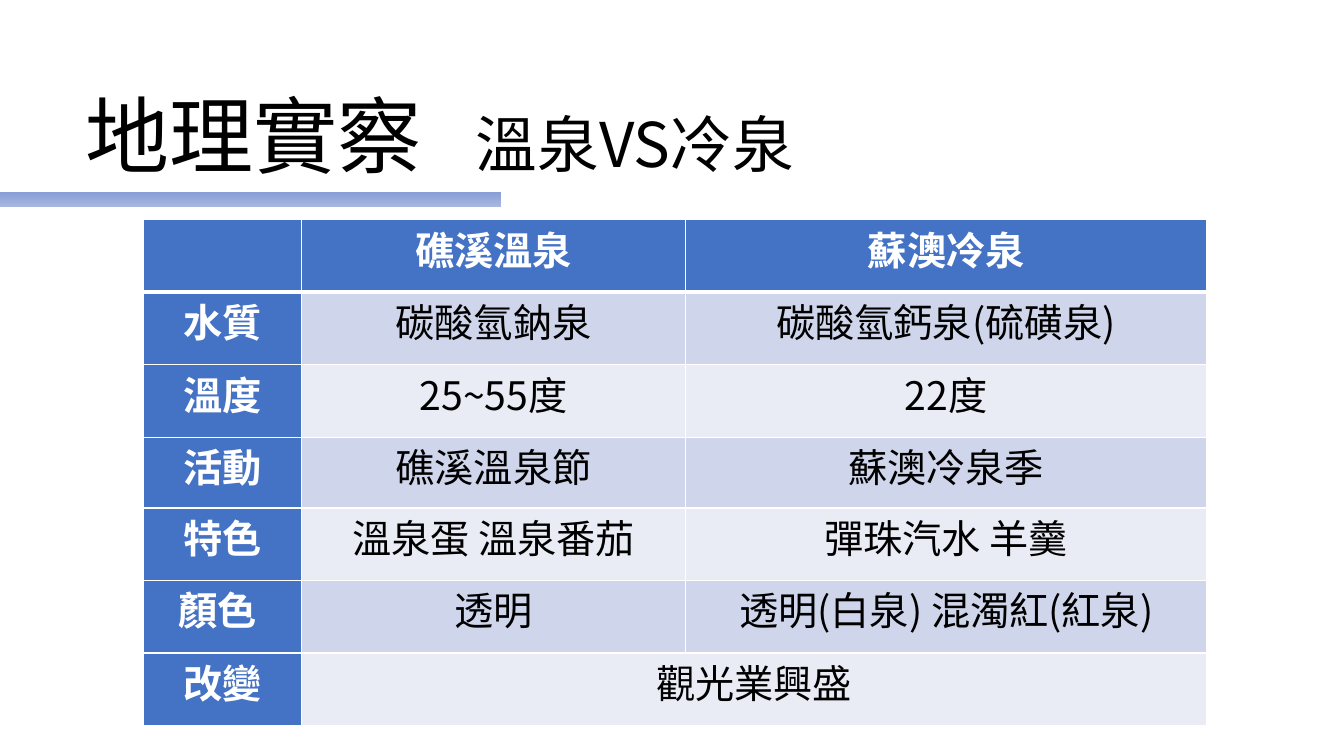
from lxml import etree
from pptx import Presentation
from pptx.dml.color import RGBColor
from pptx.enum import shapes, text
from pptx.oxml.ns import qn
from pptx.util import Inches, Pt

FONT = "Noto Sans CJK SC"
WHITE, BLACK, BLUE = "FFFFFF", "000000", "4472C4"
BANDS = ["CFD5EA", "E9EBF5"]
BAR_TOP, BAR_BOTTOM = "889ED7", "A8B7DF"

TITLE = [("地理實察", 60), ("\t溫泉VS冷泉", 44)]
ROWS = [
    ["", "礁溪溫泉", "蘇澳冷泉"],
    ["水質", "碳酸氫鈉泉", "碳酸氫鈣泉(硫磺泉)"],
    ["溫度", "25~55度", "22度"],
    ["活動", "礁溪溫泉節", "蘇澳冷泉季"],
    ["特色", "溫泉蛋 溫泉番茄", "彈珠汽水 羊羹"],
    ["顏色 ", "透明", "透明(白泉) 混濁紅(紅泉)"],
    ["改變", "觀光業興盛", ""],
]
COL_WIDTHS = [1.57, 3.81, 5.17]
ROW_HEIGHTS = [0.72, 0.72, 0.72, 0.7, 0.72, 0.72, 0.72]


def rgb(value):
    return RGBColor.from_string(value)


def style_run(r, size, color, bold=False):
    r.font.size, r.font.bold, r.font.name = Pt(size), bold, FONT
    r.font.color.rgb = rgb(color)
    east_asian = etree.Element(qn("a:ea"), typeface=FONT)
    r.font._element.find(qn("a:latin")).addnext(east_asian)


def set_borders(cell, widths):
    """Draw white borders; widths maps L, R, T, B to points."""
    props = cell._tc.get_or_add_tcPr()
    for i, (side, width) in enumerate(widths.items()):
        line = etree.Element(qn(f"a:ln{side}"), w=str(Pt(width)))
        fill = etree.SubElement(line, qn("a:solidFill"))
        etree.SubElement(fill, qn("a:srgbClr"), val=WHITE)
        props.insert(i, line)


def add_title(s):
    box = s.shapes.add_textbox(Inches(0.75), Inches(0.73), Inches(9.33), Inches(1.32))
    tf = box.text_frame
    tf.word_wrap = True
    tf.vertical_anchor = text.MSO_ANCHOR.MIDDLE
    p = tf.paragraphs[0]
    tabs = etree.SubElement(p._p.get_or_add_pPr(), qn("a:tabLst"))
    etree.SubElement(tabs, qn("a:tab"), pos=str(Inches(3.87)), algn="l")
    p.line_spacing = 0.9
    for words, size in TITLE:
        r = p.add_run()
        r.text = words
        style_run(r, size, BLACK)


def add_comparison(s):
    frame = s.shapes.add_table(
        len(ROWS), len(COL_WIDTHS), Inches(1.42), Inches(2.18),
        Inches(sum(COL_WIDTHS)), Inches(sum(ROW_HEIGHTS)))
    table = frame.table
    table.first_col = True
    for column, width in zip(table.columns, COL_WIDTHS):
        column.width = Inches(width)
    for row, height in zip(table.rows, ROW_HEIGHTS):
        row.height = Inches(height)
    for i, row in enumerate(ROWS):
        for j, words in enumerate(row):
            cell = table.cell(i, j)
            heading = i == 0 or j == 0
            cell.margin_left = cell.margin_right = Inches(0.07)
            cell.margin_top = cell.margin_bottom = 0
            cell.fill.solid()
            cell.fill.fore_color.rgb = rgb(BLUE if heading else BANDS[(i - 1) % 2])
            set_borders(cell, {"L": 1, "R": 1, "T": 3 if i == 1 else 1,
                               "B": 3 if i == 0 else 1})
            cell.text_frame.text = words
            p = cell.text_frame.paragraphs[0]
            p.alignment = text.PP_ALIGN.CENTER
            for r in p.runs:
                style_run(r, 28, WHITE if heading else BLACK, heading)
    last = len(ROWS) - 1
    table.cell(last, 1).merge(table.cell(last, 2))


def add_bar(s):
    bar = s.shapes.add_shape(shapes.MSO_SHAPE.RECTANGLE, 0, Inches(1.91),
                             Inches(4.97), Inches(0.14))
    bar.shadow.inherit = False
    bar.line.fill.background()
    bar.fill.gradient()
    bar.fill.gradient_angle = 270
    for stop, color in zip(bar.fill.gradient_stops, [BAR_TOP, BAR_BOTTOM]):
        stop.color.rgb = rgb(color)


def main():
    prs = Presentation()
    prs.slide_width, prs.slide_height = Inches(13.33), Inches(7.5)
    s = prs.slides.add_slide(prs.slide_layouts[6])
    add_title(s)
    add_comparison(s)
    add_bar(s)
    prs.save("out.pptx")


if __name__ == "__main__":
    main()
